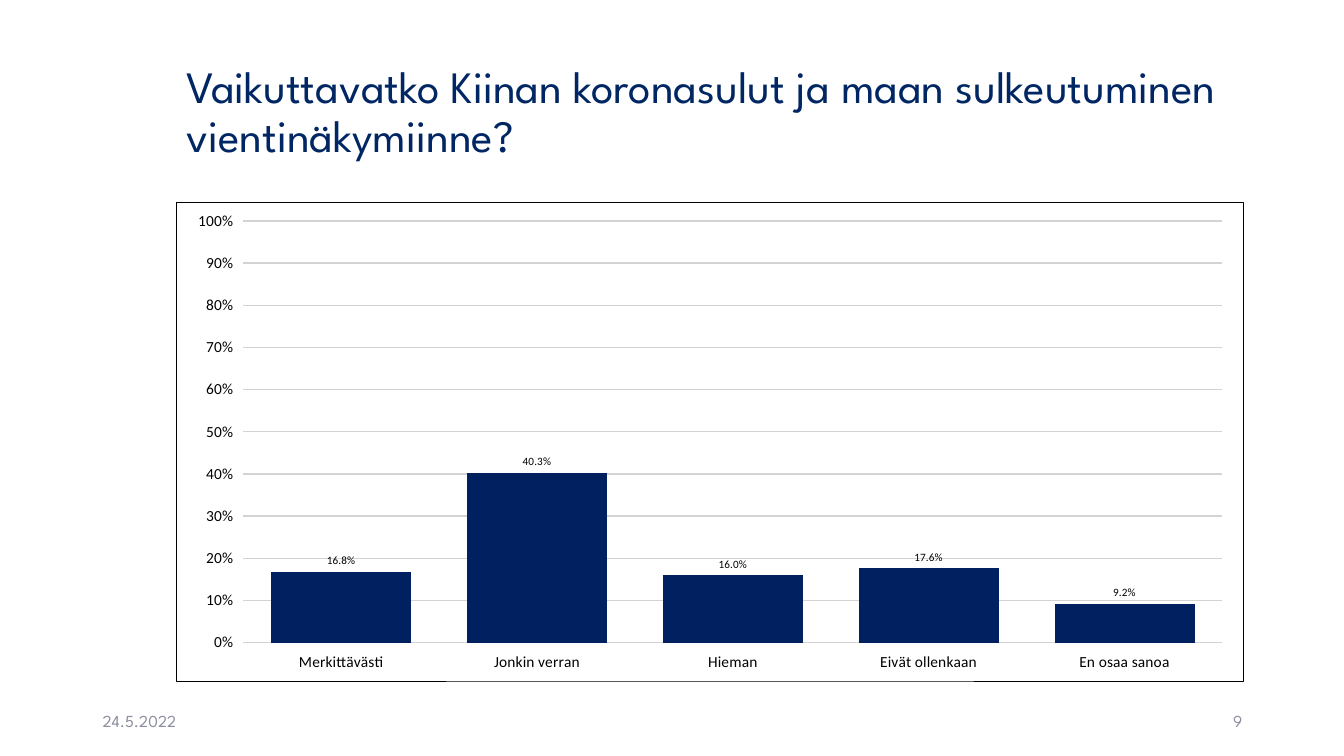
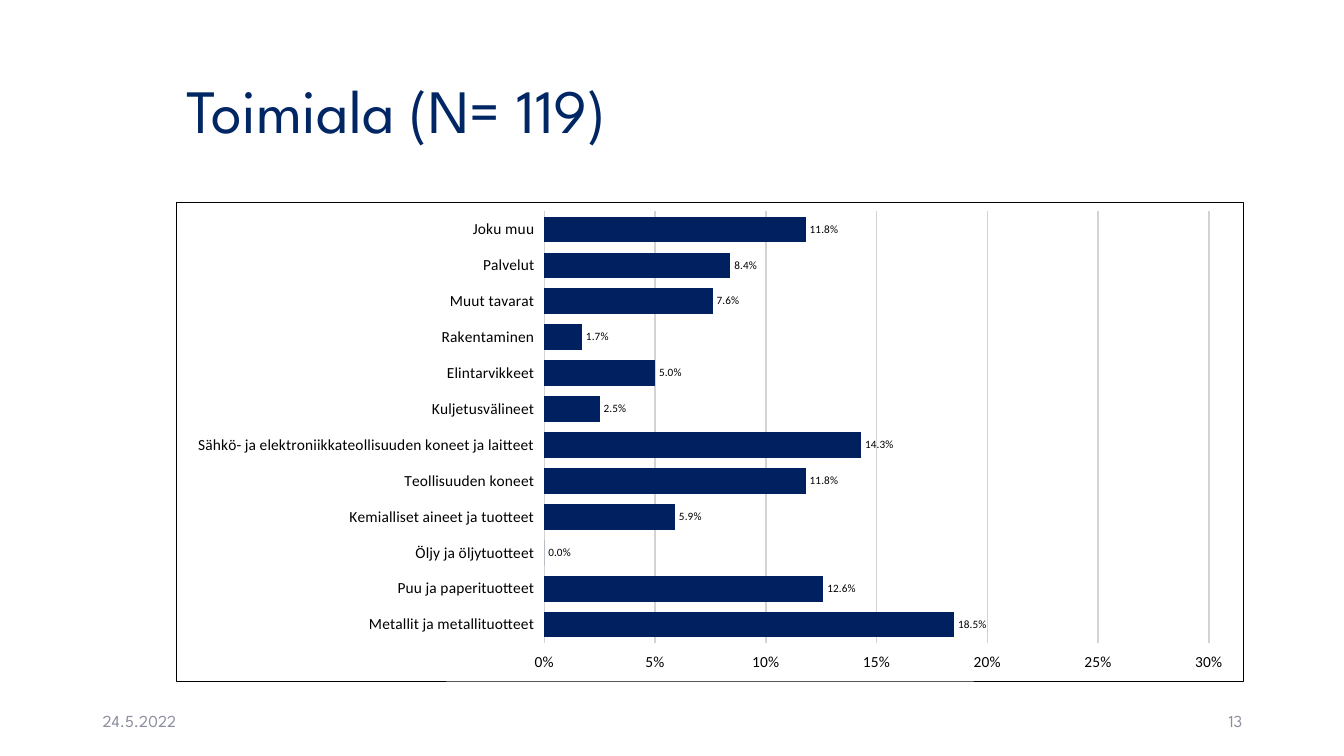
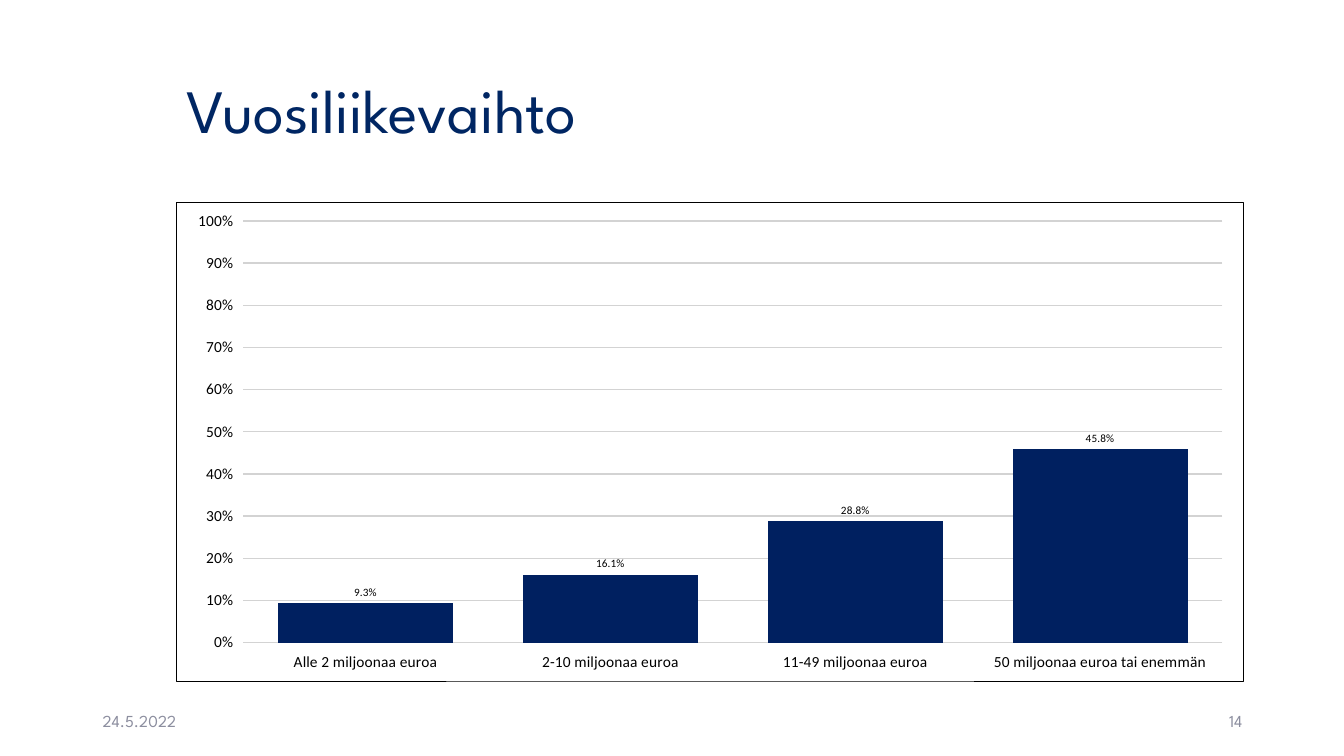
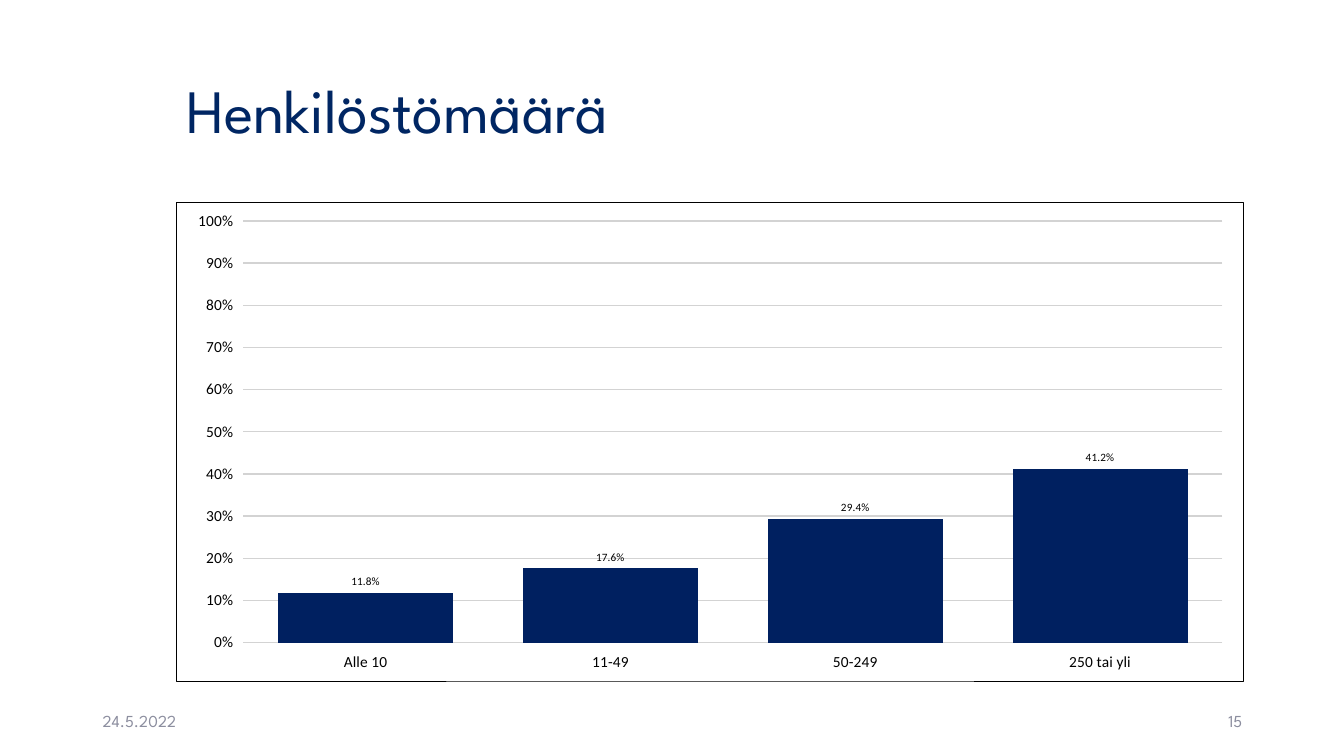
from lxml import etree
from pptx import Presentation
from pptx.chart.data import CategoryChartData
from pptx.dml.color import RGBColor
from pptx.enum.chart import XL_CHART_TYPE as ChartType, XL_LABEL_POSITION as LabelPos
from pptx.enum.text import MSO_ANCHOR, PP_ALIGN
from pptx.oxml import parse_xml
from pptx.oxml.ns import nsdecls, qn
from pptx.util import Inches, Pt

TITLE_BLUE = RGBColor(0x00, 0x26, 0x63)
BAR_BLUE = RGBColor(0x00, 0x20, 0x60)
FOOTER_GREY = RGBColor(0x8C, 0x8E, 0x9F)
GRID_GREY = RGBColor(0xD3, 0xD3, 0xD3)
WHITE = RGBColor(0xFF, 0xFF, 0xFF)
BLACK = RGBColor(0x00, 0x00, 0x00)

TEXT_FONT = "League Spartan"
CHART_FONT = "Calibri"
DATE = "24.5.2022"


def area_format(fill, border=None):
    """Return a c:spPr element with a solid fill and an optional thin border."""
    line = "<a:ln><a:noFill/></a:ln>"
    if border is not None:
        line = (f'<a:ln w="{Pt(0.5)}"><a:solidFill><a:srgbClr val="{border}"/>'
                "</a:solidFill></a:ln>")
    return parse_xml(f'<c:spPr {nsdecls("c", "a")}><a:solidFill>'
                     f'<a:srgbClr val="{fill}"/></a:solidFill>{line}</c:spPr>')


class Deck:
    def __init__(self):
        self.prs = Presentation()
        self.prs.slide_width = Inches(13.33)
        self.prs.slide_height = Inches(7.5)
        self.s = None

    def add_slide(self, title, number, title_size):
        self.s = self.prs.slides.add_slide(self.prs.slide_layouts[6])
        self.s.background.fill.solid()
        self.s.background.fill.fore_color.rgb = WHITE
        p = self.text(title, 1.75, 0.4, 10.59, 1.45, title_size, TITLE_BLUE)
        p.line_spacing = 0.9
        self.text(DATE, 0.92, 6.95, 3, 0.4, 12, FOOTER_GREY)
        p = self.text(str(number), 9.42, 6.95, 3, 0.4, 12, FOOTER_GREY)
        p.alignment = PP_ALIGN.RIGHT

    def text(self, text, left, top, width, height, size, color):
        """Add a vertically centred text box and return its paragraph."""
        sp = self.s.shapes.add_textbox(Inches(left), Inches(top),
                                       Inches(width), Inches(height))
        tf = sp.text_frame
        tf.word_wrap = True
        tf.vertical_anchor = MSO_ANCHOR.MIDDLE
        tf.text = text
        p = tf.paragraphs[0]
        font = p.runs[0].font
        font.name, font.size, font.color.rgb = TEXT_FONT, Pt(size), color
        return p

    def chart(self, kind, shares, top_value, step):
        """Add a framed chart of shares, a dict from category to fraction."""
        data = CategoryChartData()
        data.categories = list(shares)
        data.add_series("Series 1", list(shares.values()))
        chart = self.s.shapes.add_chart(kind, Inches(1.75), Inches(2), Inches(10.59),
                                        Inches(4.76), data).chart
        chart.has_title = False
        chart.has_legend = False
        self.chart_font(chart.font, 11)

        plot = chart.plots[0]
        plot.gap_width = 40
        plot.vary_by_categories = False
        fill = plot.series[0].format.fill
        fill.solid()
        fill.fore_color.rgb = BAR_BLUE
        plot.has_data_labels = True
        labels = plot.data_labels
        labels.show_value = True
        labels.number_format = "0.0%"
        labels.number_format_is_linked = False
        labels.position = LabelPos.OUTSIDE_END
        self.chart_font(labels.font, 8)

        axis = chart.value_axis
        axis.minimum_scale, axis.maximum_scale, axis.major_unit = 0, top_value, step
        axis.tick_labels.number_format = "0%"
        axis.tick_labels.number_format_is_linked = False
        axis.has_major_gridlines = True
        grid = axis.major_gridlines.format.line
        grid.color.rgb, grid.width = GRID_GREY, Pt(1)
        for ax in (axis, chart.category_axis):
            ax.format.line.fill.background()

        chart_el = chart.element.find(qn("c:chart"))
        chart_el.addnext(area_format(WHITE, BLACK))
        chart_el.find(qn("c:plotArea")).append(area_format(WHITE))

    @staticmethod
    def chart_font(font, size):
        font.name, font.size, font.color.rgb = CHART_FONT, Pt(size), BLACK


def main():
    deck = Deck()

    deck.add_slide("Vaikuttavatko Kiinan koronasulut ja maan sulkeutuminen "
                   "vientinäkymiinne?", 9, 32)
    deck.chart(ChartType.COLUMN_CLUSTERED, {
        "Merkittävästi": 0.168,
        "Jonkin verran": 0.403,
        "Hieman": 0.16,
        "Eivät ollenkaan": 0.176,
        "En osaa sanoa": 0.092,
    }, 1, 0.1)

    deck.add_slide("Toimiala (N= 119)", 13, 44)
    deck.chart(ChartType.BAR_CLUSTERED, {
        "Metallit ja metallituotteet": 0.185,
        "Puu ja paperituotteet": 0.126,
        "Öljy ja öljytuotteet": 0,
        "Kemialliset aineet ja tuotteet": 0.059,
        "Teollisuuden koneet": 0.118,
        "Sähkö- ja elektroniikkateollisuuden koneet ja laitteet": 0.143,
        "Kuljetusvälineet": 0.025,
        "Elintarvikkeet": 0.05,
        "Rakentaminen": 0.017,
        "Muut tavarat": 0.076,
        "Palvelut": 0.084,
        "Joku muu": 0.118,
    }, 0.3, 0.05)

    deck.add_slide("Vuosiliikevaihto", 14, 44)
    deck.chart(ChartType.COLUMN_CLUSTERED, {
        "Alle 2 miljoonaa euroa": 0.093,
        "2-10 miljoonaa euroa": 0.161,
        "11-49 miljoonaa euroa": 0.288,
        "50 miljoonaa euroa tai enemmän": 0.458,
    }, 1, 0.1)

    deck.add_slide("Henkilöstömäärä", 15, 44)
    deck.chart(ChartType.COLUMN_CLUSTERED, {
        "Alle 10": 0.118,
        "11-49": 0.176,
        "50-249": 0.294,
        "250 tai yli": 0.412,
    }, 1, 0.1)

    deck.prs.save("out.pptx")


if __name__ == "__main__":
    main()
